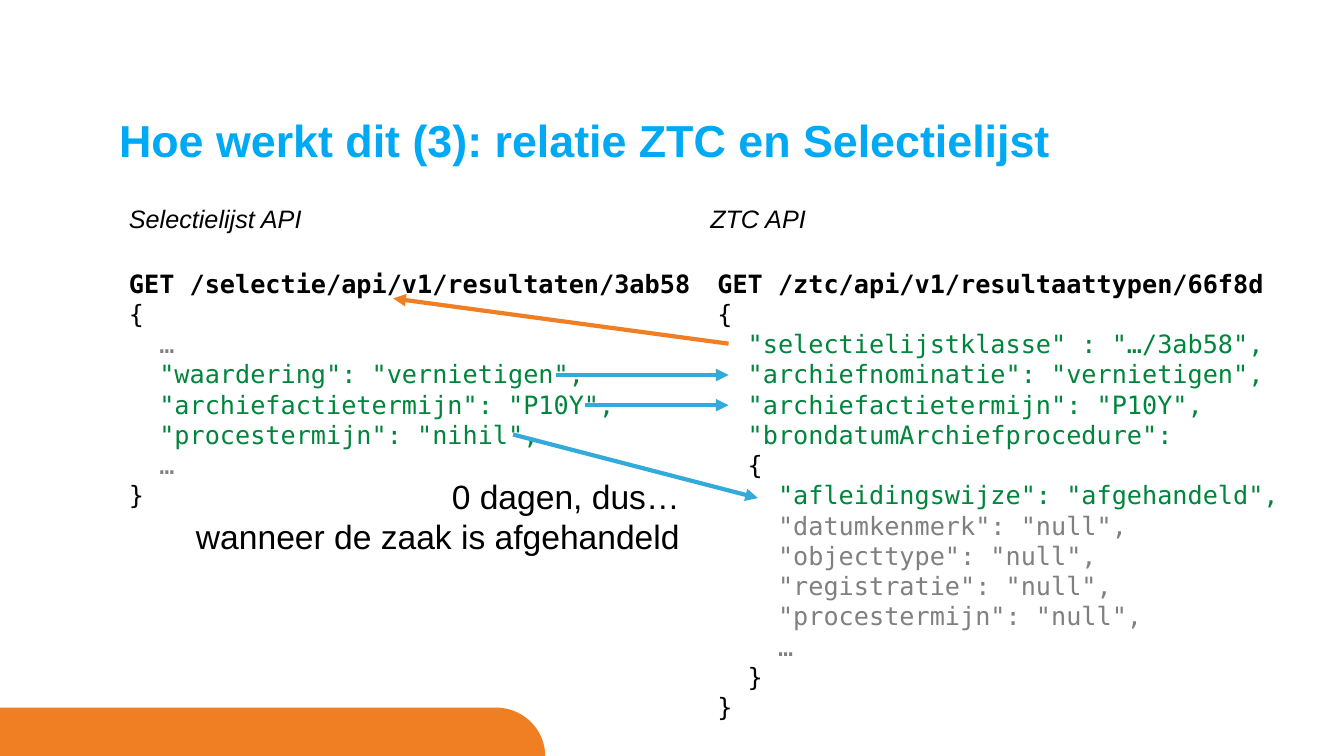
from dataclasses import dataclass
from math import cos, pi, sin

from lxml.etree import SubElement
from pptx import Presentation
from pptx.dml.color import RGBColor as Rgb
from pptx.enum.shapes import MSO_CONNECTOR as Link
from pptx.enum.text import MSO_ANCHOR as Anchor, PP_ALIGN as Align
from pptx.oxml.ns import qn
from pptx.util import Cm, Pt


@dataclass(frozen=True)
class Theme:
    """Colours, fonts and type sizes of the slide."""
    title: str = "00A9F3"
    ink: str = "000000"
    green: str = "00853C"
    gray: str = "808080"
    blue: str = "33AADC"
    orange: str = "F07E23"
    sans: str = "Arial"
    mono: str = "DejaVu Sans Mono"
    head: int = 32
    note: int = 24
    body: int = 18
    line: int = 3


T = Theme()
TITLE = "Hoe werkt dit (3): relatie ZTC en Selectielijst"
HEADS = [
    ("Selectielijst API", (3, 5, 8.13, 1.02)),
    ("ZTC API", (17.65, 5, 3.35, 1.02)),
]
CODES = [
    ((3, 6.63, 14.83, 7.19), [
        ("GET /selectie/api/v1/resultaten/3ab58", T.ink),
        ("{", T.ink),
        ("  …", T.gray),
        ('  "waardering": "vernietigen",', T.green),
        ('  "archiefactietermijn": "P10Y",', T.green),
        ('  "procestermijn": "nihil",', T.green),
        ("  …", T.gray),
        ("}", T.ink),
    ]),
    ((17.83, 6.63, 14.83, 12.57), [
        ("GET /ztc/api/v1/resultaattypen/66f8d", T.ink),
        ("{", T.ink),
        ('  "selectielijstklasse" : "…/3ab58",', T.green),
        ('  "archiefnominatie": "vernietigen",', T.green),
        ('  "archiefactietermijn": "P10Y",', T.green),
        ('  "brondatumArchiefprocedure":', T.green),
        ("  {", T.ink),
        ('    "afleidingswijze": "afgehandeld",', T.green),
        ('    "datumkenmerk": "null",', T.gray),
        ('    "objecttype": "null",', T.gray),
        ('    "registratie": "null",', T.gray),
        ('    "procestermijn": "null",', T.gray),
        ("    …", T.gray),
        ("  }", T.ink),
        ("}", T.ink),
    ]),
]
NOTE = ["0 dagen, dus…", "wanneer de zaak is afgehandeld"]
ARROWS = [
    ((14, 9.45), (18.36, 9.45), T.blue),
    ((14.73, 10.21), (18.36, 10.21), T.blue),
    ((12.93, 10.95), (19.1, 12.55), T.blue),
    ((18.36, 8.66), (9.91, 7.52), T.orange),
]
WIDE, HIGH = 33.87, 19.05
BAND = (13.74, 17.83)
CURVE = 1.25


def style(para, name, size, color, bold=False, italic=False):
    """Set the font of a paragraph."""
    font = para.font
    font.name, font.size = name, Pt(size)
    font.bold, font.italic = bold, italic
    font.color.rgb = Rgb.from_string(color)


def write(slide, area, lines):
    """Add a text box and return its paragraphs."""
    frame = slide.shapes.add_textbox(*map(Cm, area)).text_frame
    frame.word_wrap = True
    frame.text = "\n".join(lines)
    return frame.paragraphs


def band(slide):
    """Draw the footer band with its rounded corner."""
    right, top = BAND
    drop = HIGH - top
    turns = [pi / 2 * i / 24 for i in range(25)]
    arc = [(right - CURVE + CURVE * sin(a), HIGH - drop * cos(a)) for a in turns]
    pen = slide.shapes.build_freeform(Cm(0), Cm(top))
    pen.add_line_segments([(Cm(x), Cm(y)) for x, y in arc + [(0, HIGH)]])
    shape = pen.convert_to_shape()
    shape.shadow.inherit = False
    shape.fill.solid()
    shape.fill.fore_color.rgb = Rgb.from_string(T.orange)
    shape.line.fill.background()


def arrow(slide, start, end, color):
    """Draw a straight arrow between two points."""
    link = slide.shapes.add_connector(Link.STRAIGHT, *map(Cm, start + end))
    link.line.width = Pt(T.line)
    link.line.color.rgb = Rgb.from_string(color)
    SubElement(link.line._get_or_add_ln(), qn("a:tailEnd"), type="triangle")
    SubElement(link._element.spPr, qn("a:effectLst"))


def head(slide):
    """Place and format the title."""
    title = slide.shapes.title
    title.left, title.top, title.width, title.height = map(Cm, (3, 3, 27.86, 2))
    frame = title.text_frame
    frame.text = TITLE
    frame.word_wrap = True
    frame.vertical_anchor = Anchor.TOP
    frame.margin_left = frame.margin_right = 0
    frame.margin_top = frame.margin_bottom = 0
    para = frame.paragraphs[0]
    para.alignment, para.line_spacing = Align.LEFT, 0.9
    style(para, T.sans, T.head, T.title, bold=True)


def main():
    """Build and save the slide."""
    deck = Presentation()
    deck.slide_width, deck.slide_height = Cm(WIDE), Cm(HIGH)
    slide = deck.slides.add_slide(deck.slide_layouts[5])
    band(slide)
    head(slide)
    for area, lines in CODES:
        paras = write(slide, area, [text for text, _ in lines])
        for i, (para, (_, color)) in enumerate(zip(paras, lines)):
            style(para, T.mono, T.body, color, bold=i == 0)
    for text, area in HEADS:
        style(write(slide, area, [text])[0], T.sans, T.body, T.ink, italic=True)
    for para in write(slide, (4.55, 11.86, 12.83, 2.31), NOTE):
        para.alignment = Align.RIGHT
        style(para, T.sans, T.note, T.ink)
    for start, end, color in ARROWS:
        arrow(slide, start, end, color)
    deck.save("out.pptx")


if __name__ == "__main__":
    main()
